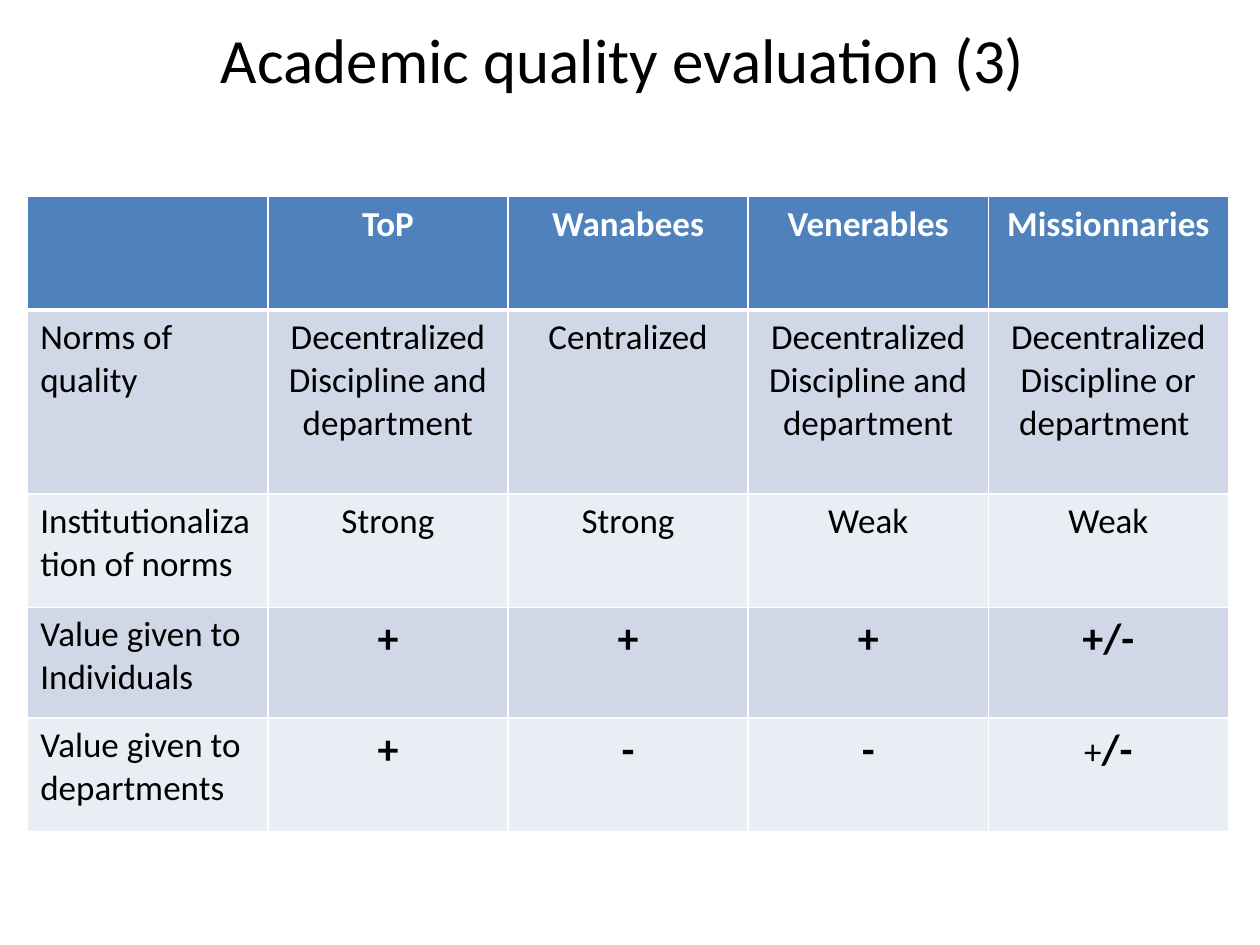
from lxml import etree
from pptx import Presentation
from pptx.dml.color import RGBColor
from pptx.enum.text import MSO_ANCHOR, PP_ALIGN
from pptx.oxml.ns import qn
from pptx.util import Inches, Pt

LEFT, CENTER = PP_ALIGN.LEFT, PP_ALIGN.CENTER
MIDDLE = MSO_ANCHOR.MIDDLE
BLACK, WHITE = "000000", "FFFFFF"
HEADER_FILL, BAND_FILLS = "4F81BD", ("D0D8E8", "E9EDF4")


def add_text(p, text, size=20, color=BLACK, bold=False, align=CENTER):
    p.alignment = align
    r = p.add_run()
    r.text = text
    r.font.name = "Calibri"
    r.font.size = Pt(size)
    r.font.bold = bold
    r.font.color.rgb = RGBColor.from_string(color)


def add_border(cell, side, width):
    ln = etree.SubElement(cell._tc.get_or_add_tcPr(), qn("a:ln" + side), w=str(Pt(width)))
    fill = etree.SubElement(ln, qn("a:solidFill"))
    etree.SubElement(fill, qn("a:srgbClr"), val=WHITE)


prs = Presentation()
prs.slide_width, prs.slide_height = Inches(10), Inches(7.5)
s = prs.slides.add_slide(prs.slide_layouts[6])

# Title
tf = s.shapes.add_textbox(Inches(0.5), Inches(0.15), Inches(9), Inches(0.63)).text_frame
tf.word_wrap = True
tf.vertical_anchor = MIDDLE
add_text(tf.paragraphs[0], "Academic quality evaluation (3) ", size=36)

# Table contents
rows = [
    ["", "ToP", "Wanabees", "Venerables", "Missionnaries"],
    ["Norms of quality", "Decentralized Discipline and department", "Centralized",
     "Decentralized Discipline and department", "Decentralized Discipline or department "],
    ["Institutionalization of norms", "Strong", "Strong", "Weak", "Weak"],
    ["Value given to Individuals", "+", "+", "+", "+/-"],
    ["Value given to departments", "+", "-", "-", "+/-"],
]
heights = [0.9, 1.46, 0.9, 0.88, 0.9]
n_cols = len(rows[0])
width = 9.53

table = s.shapes.add_table(len(rows), n_cols, Inches(0.22), Inches(1.56),
                           Inches(width), Inches(sum(heights))).table
for col in table.columns:
    col.width = Inches(width / n_cols)

for i, (texts, height) in enumerate(zip(rows, heights)):
    table.rows[i].height = Inches(height)
    header = i == 0
    for j, text in enumerate(texts):
        cell = table.cell(i, j)

        # Borders, with a thick rule under the header
        for side, line in (("L", 1), ("R", 1), ("T", 3 if i == 1 else 1), ("B", 3 if header else 1)):
            add_border(cell, side, line)
        cell.fill.solid()
        cell.fill.fore_color.rgb = RGBColor.from_string(
            HEADER_FILL if header else BAND_FILLS[(i - 1) % 2])

        # Text: the plus and minus ratings are larger and bold
        p = cell.text_frame.paragraphs[0]
        if header:
            add_text(p, text, color=WHITE, bold=True)
        elif j == 0:
            add_text(p, text, align=LEFT)
        elif i == 4 and j == 4:
            add_text(p, "+")
            add_text(p, "/-", size=24, bold=True)
        elif i >= 3:
            add_text(p, text, size=24, bold=True)
        else:
            add_text(p, text)

prs.save("out.pptx")
